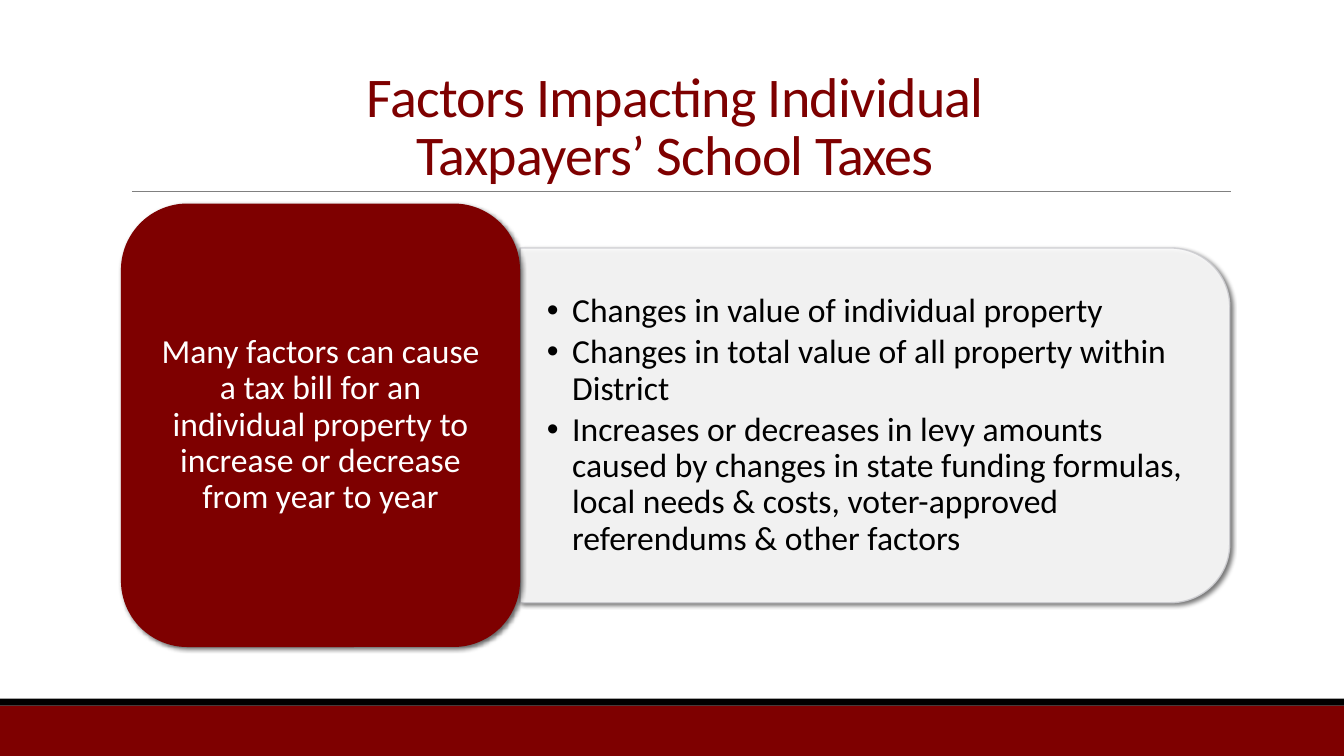
from copy import deepcopy

from lxml import etree
from pptx import Presentation
from pptx import util as u
from pptx.dml.color import RGBColor
from pptx.enum import shapes, text
from pptx.oxml import ns

COLORS = {
    "maroon": "7E0000",
    "black": "000000",
    "white": "FFFFFF",
    "rule": "808080",
    "edge": "CDCDD1",
}
FONT = "Calibri"
W, H = 960, 540


def rgb(name):
    return RGBColor.from_string(COLORS[name])


def sub(parent, tag, **attrs):
    return etree.SubElement(parent, ns.qn(tag), attrs)


def write(p, content, size=24, color="black", align=None, line=0.9, after=0, spc=None):
    p.text = content
    p.alignment = align
    p.line_spacing = line
    p.space_before, p.space_after = u.Pt(0), u.Pt(after)
    for r in p.runs:
        r.font.name, r.font.size = FONT, u.Pt(size)
        r.font.color.rgb = rgb(color)
        if spc is not None:
            r.font._element.set("spc", str(spc))
    for br in p._p.findall(ns.qn("a:br")):
        br.append(deepcopy(p.runs[0].font._element))


class Slide:
    def __init__(self, prs):
        self.s = prs.slides.add_slide(prs.slide_layouts[1])

    def place(self, sp, x, y, w, h):
        sp.left, sp.top, sp.width, sp.height = map(u.Pt, (x, y, w, h))

    def frame(self, sp, anchor, mx=7.2, my=3.6):
        tf = sp.text_frame
        tf.word_wrap = True
        tf.auto_size = text.MSO_AUTO_SIZE.NONE
        tf.vertical_anchor = anchor
        tf.margin_left = tf.margin_right = u.Pt(mx)
        tf.margin_top = tf.margin_bottom = u.Pt(my)
        return tf

    def box(self, kind, x, y, w, h, fill, edge=None, alpha=None, shadow=False, rotation=0):
        sp = self.s.shapes.add_shape(kind, *map(u.Pt, (x, y, w, h)))
        sp.rotation = rotation
        sp.shadow.inherit = False
        sp.fill.solid()
        sp.fill.fore_color.rgb = rgb(fill)
        if edge:
            sp.line.color.rgb = rgb(edge)
            sp.line.width = u.Pt(1)
        else:
            sp.line.fill.background()
        if alpha:
            for clr in sp._element.spPr.iter(ns.qn("a:srgbClr")):
                sub(clr, "a:alpha", val=str(alpha * 1000))
        if shadow:
            effects = sp._element.spPr.find(ns.qn("a:effectLst"))
            outer = sub(effects, "a:outerShdw", blurRad=str(u.Pt(3)), dist=str(u.Pt(2)),
                        dir="2700000", rotWithShape="0")
            clr = sub(outer, "a:srgbClr", val=COLORS["black"])
            sub(clr, "a:alpha", val="60000")
        return sp

    def rule(self, x1, x2, y):
        ln = self.s.shapes.add_connector(shapes.MSO_CONNECTOR.STRAIGHT, *map(u.Pt, (x1, y, x2, y)))
        ln.line.color.rgb = rgb("rule")
        ln.line.width = u.Pt(0.5)
        sub(ln._element.spPr, "a:effectLst")

    def title(self, content, x, y, w, h):
        sp = self.s.shapes.title
        self.place(sp, x, y, w, h)
        tf = self.frame(sp, text.MSO_ANCHOR.BOTTOM)
        write(tf.paragraphs[0], content, size=40, color="maroon",
              align=text.PP_ALIGN.CENTER, line=0.85, spc=-50)

    def card(self, content, x, y, w, h):
        sp = self.box(shapes.MSO_SHAPE.ROUNDED_RECTANGLE, x, y, w, h, "maroon", shadow=True)
        tf = self.frame(sp, text.MSO_ANCHOR.MIDDLE, mx=10.8)
        write(tf.paragraphs[0], content, color="white", align=text.PP_ALIGN.CENTER)

    def panel(self, x, y, w, h):
        self.box(shapes.MSO_SHAPE.ROUND_2_SAME_RECTANGLE, x + (w - h) / 2, y + (h - w) / 2, h, w,
                 "white", edge="edge", alpha=90, shadow=True, rotation=90)

    def bullets(self, items, x, y, w, h):
        sp = self.s.placeholders[1]
        self.place(sp, x, y, w, h)
        self.s.shapes._spTree.append(sp._element)
        tf = self.frame(sp, text.MSO_ANCHOR.MIDDLE, mx=19.2, my=9.6)
        for i, item in enumerate(items):
            p = tf.add_paragraph() if i else tf.paragraphs[0]
            write(p, item, after=3.6, align=text.PP_ALIGN.LEFT)
            pPr = p._p.get_or_add_pPr()
            pPr.set("marL", str(u.Pt(18)))
            pPr.set("indent", str(-u.Pt(18)))
            sub(pPr, "a:buChar", char="•")


def main():
    prs = Presentation()
    prs.slide_width, prs.slide_height = u.Pt(W), u.Pt(H)
    slide = Slide(prs)
    slide.box(shapes.MSO_SHAPE.RECTANGLE, 0, 504, W, 36, "maroon")
    slide.box(shapes.MSO_SHAPE.RECTANGLE, 0, 499, W, 5, "black")
    slide.rule(94.3, 879, 136.8)
    slide.title("Factors Impacting Individual\vTaxpayers’ School Taxes", 86.4, 22.3, 792, 114.5)
    slide.panel(371.5, 177.1, 506.9, 253.4)
    slide.bullets([
        "Changes in value of individual property",
        "Changes in total value of all property within District",
        "Increases or decreases in levy amounts caused by changes in state funding formulas, "
        "local needs & costs, voter-approved referendums & other factors",
    ], 371.5, 189.4, 494.6, 229)
    slide.card("Many factors can cause a tax bill for an individual property to "
               "increase or decrease from year to year", 86.4, 145.4, 285.1, 316.8)
    prs.save("out.pptx")


if __name__ == "__main__":
    main()
